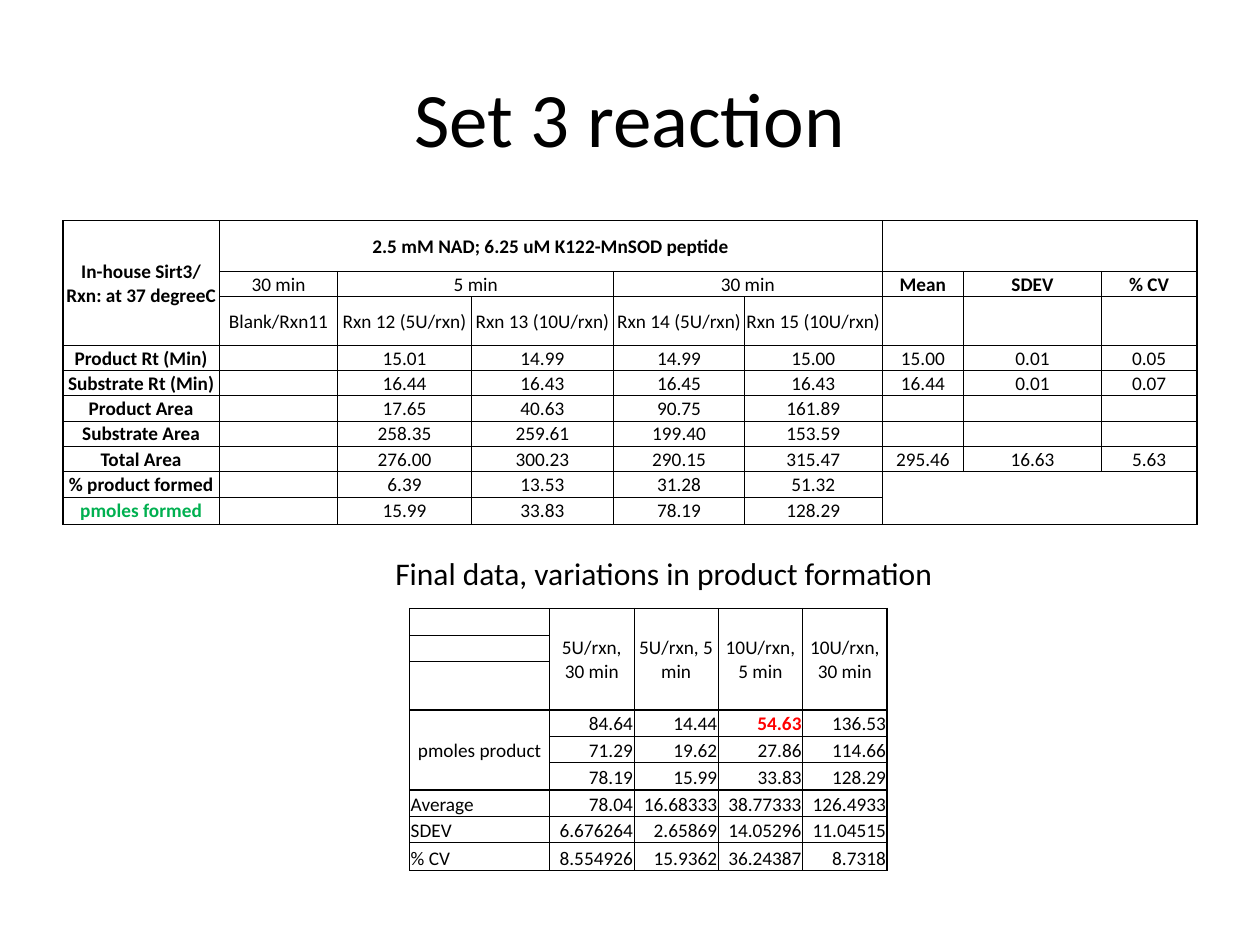
from dataclasses import dataclass
from typing import Callable

from lxml import etree
from pptx import Presentation
from pptx import util as u
from pptx.dml import color
from pptx.enum import text as t
from pptx.oxml import ns

FONT = "Calibri"
BLACK, GREEN, RED = "000000", "00B050", "FF0000"
THIN, THICK = 0.5, 1
MID, LOW = t.MSO_ANCHOR.MIDDLE, t.MSO_ANCHOR.BOTTOM
LEFT, CENTER, RIGHT = t.PP_ALIGN.LEFT, t.PP_ALIGN.CENTER, t.PP_ALIGN.RIGHT


@dataclass
class Look:
    align: int = CENTER
    anchor: int = MID
    bold: bool = False
    color: str = BLACK


@dataclass
class Block:
    """A range of cells, from its top left cell."""
    row: int
    col: int
    high: int
    wide: int

    def holds(self, row: int, col: int) -> bool:
        return (self.row <= row < self.row + self.high
                and self.col <= col < self.col + self.wide)


@dataclass
class Grid:
    left: float
    top: float
    cols: list[float]
    rows: list[float]
    data: list[list[str]]
    spans: list[Block]     # merged cells
    bare: list[Block]      # areas without inner lines
    heavy: set[int]        # row edges drawn thick
    look: Callable[[int, int], Look]


def style(para, size: float, hue: str = BLACK, bold: bool = False) -> None:
    for run in para.runs:
        run.font.name = FONT
        run.font.size = u.Pt(size)
        run.font.bold = bold
        run.font.color.rgb = color.RGBColor.from_string(hue)


def rule(cell, side: str, width: float) -> None:
    """Draw one edge of a cell; zero width hides it."""
    props = cell._tc.get_or_add_tcPr()
    line = etree.SubElement(props, ns.qn(f"a:ln{side}"), w=str(u.Pt(width)))
    if width:
        fill = etree.SubElement(line, ns.qn("a:solidFill"))
        etree.SubElement(fill, ns.qn("a:srgbClr"), val=BLACK)
    else:
        etree.SubElement(line, ns.qn("a:noFill"))


def edges(grid: Grid, area: Block) -> dict[str, float]:
    """Find the width of each edge around a cell or merged cell."""
    row, col = area.row, area.col
    end, far = row + area.high, col + area.wide
    width = {
        "L": THICK if col == 0 else THIN,
        "R": THICK if far == len(grid.cols) else THIN,
        "T": THICK if row in grid.heavy else THIN,
        "B": THICK if end in grid.heavy else THIN,
    }
    beyond = {"L": (row, col - 1), "R": (row, far),
              "T": (row - 1, col), "B": (end, col)}
    for block in grid.bare:
        if block.holds(row, col):
            for side, spot in beyond.items():
                if block.holds(*spot):
                    width[side] = 0
    return width


def fill_cell(cell, words: str, look: Look) -> None:
    cell.text_frame.text = words
    cell.vertical_anchor = look.anchor
    cell.margin_left = cell.margin_right = cell.margin_top = u.Cm(0.02)
    cell.margin_bottom = 0
    para = cell.text_frame.paragraphs[0]
    para.alignment = look.align
    style(para, 11, look.color, look.bold)
    if not words:  # keeps empty rows low
        etree.SubElement(para._p, ns.qn("a:endParaRPr"), sz="1100")


def draw_grid(slide, grid: Grid) -> None:
    frame = slide.shapes.add_table(
        len(grid.rows), len(grid.cols), u.Cm(grid.left), u.Cm(grid.top),
        u.Cm(sum(grid.cols)), u.Cm(sum(grid.rows)))
    table = frame.table
    table.first_row = table.horz_banding = False
    for col, wide in zip(table.columns, grid.cols):
        col.width = u.Cm(wide)
    for row, high in zip(table.rows, grid.rows):
        row.height = u.Cm(high)
    for s in grid.spans:
        table.cell(s.row, s.col).merge(
            table.cell(s.row + s.high - 1, s.col + s.wide - 1))
    starts = {(s.row, s.col): s for s in grid.spans}
    for r, line in enumerate(grid.data):
        for c, words in enumerate(line):
            cell = table.cell(r, c)
            if not cell.is_spanned:
                area = starts.get((r, c), Block(r, c, 1, 1))
                for side, width in edges(grid, area).items():
                    rule(cell, side, width)
                fill_cell(cell, words, grid.look(r, c))
            cell.fill.background()


def rxn_look(row: int, col: int) -> Look:
    bold = col == 0 or row == 0 or (row == 2 and col >= 6)
    return Look(bold=bold, color=GREEN if (row, col) == (10, 0) else BLACK)


def sum_look(row: int, col: int) -> Look:
    if row < 3 or (row < 6 and col == 0):
        return Look()
    odd = (row, col) == (3, 3)
    return Look(RIGHT if col else LEFT, LOW, odd, RED if odd else BLACK)


def cells(source: str) -> list[list[str]]:
    return [[part.strip() for part in line.split("|")]
            for line in source.strip("\n").splitlines()]


RXN = cells("""
In-house Sirt3/ Rxn: at 37 degreeC|2.5 mM NAD; 6.25 uM K122-MnSOD peptide|||||||
||||||||
|30 min|5 min||30 min||Mean|SDEV|% CV
|Blank/Rxn11|Rxn 12 (5U/rxn)|Rxn 13 (10U/rxn)|Rxn 14 (5U/rxn)|Rxn 15 (10U/rxn)|||
Product Rt (Min)||15.01|14.99|14.99|15.00|15.00|0.01|0.05
Substrate Rt (Min)||16.44|16.43|16.45|16.43|16.44|0.01|0.07
Product Area||17.65|40.63|90.75|161.89|||
Substrate Area||258.35|259.61|199.40|153.59|||
Total Area||276.00|300.23|290.15|315.47|295.46|16.63|5.63
% product formed||6.39|13.53|31.28|51.32|||
pmoles formed||15.99|33.83|78.19|128.29|||
""")
SUMS = cells("""
|5U/rxn, 30 min|5U/rxn, 5 min|10U/rxn, 5 min|10U/rxn, 30 min
||||
||||
pmoles product|84.64|14.44|54.63|136.53
|71.29|19.62|27.86|114.66
|78.19|15.99|33.83|128.29
Average|78.04|16.68333|38.77333|126.4933
SDEV|6.676264|2.65869|14.05296|11.04515
% CV|8.554926|15.9362|36.24387|8.7318
""")

GRIDS = [
    Grid(1.27, 4.45, [3.15, 2.39, 2.69, 2.87, 2.64, 2.77, 1.65, 2.77, 1.93],
         [0.51] * 10 + [0.55], RXN,
         [Block(0, 0, 4, 1), Block(0, 1, 2, 5), Block(2, 2, 1, 2),
          Block(2, 4, 1, 2)],
         [Block(0, 6, 2, 3), Block(9, 6, 2, 3)], {0, 11}, rxn_look),
    Grid(8.26, 12.27, [2.82] + [1.7] * 4, [0.53, 0.53, 0.56] * 3, SUMS,
         [Block(0, c, 3, 1) for c in range(1, 5)] + [Block(3, 0, 3, 1)],
         [], {0, 3, 6, 9}, sum_look),
]


def main() -> None:
    deck = Presentation()
    deck.slide_width, deck.slide_height = u.Cm(25.4), u.Cm(19.05)
    slide = deck.slides.add_slide(deck.slide_layouts[5])

    # Title
    title = slide.shapes.title
    title.left, title.top = u.Cm(1.27), u.Cm(0.76)
    title.width, title.height = u.Cm(22.86), u.Cm(3.18)
    title.text_frame.text = "Set 3 reaction"
    title.text_frame.vertical_anchor = MID
    title.text_frame.paragraphs[0].alignment = CENTER
    style(title.text_frame.paragraphs[0], 44)

    # Tables
    for grid in GRIDS:
        draw_grid(slide, grid)

    # Heading of the lower table
    box = slide.shapes.add_textbox(u.Cm(7.72), u.Cm(11.05), u.Cm(11.48), u.Cm(1.02))
    box.text_frame.text = "Final data, variations in product formation"
    box.text_frame.word_wrap = False
    box.text_frame.auto_size = t.MSO_AUTO_SIZE.SHAPE_TO_FIT_TEXT
    style(box.text_frame.paragraphs[0], 18)

    deck.save("out.pptx")


if __name__ == "__main__":
    main()
